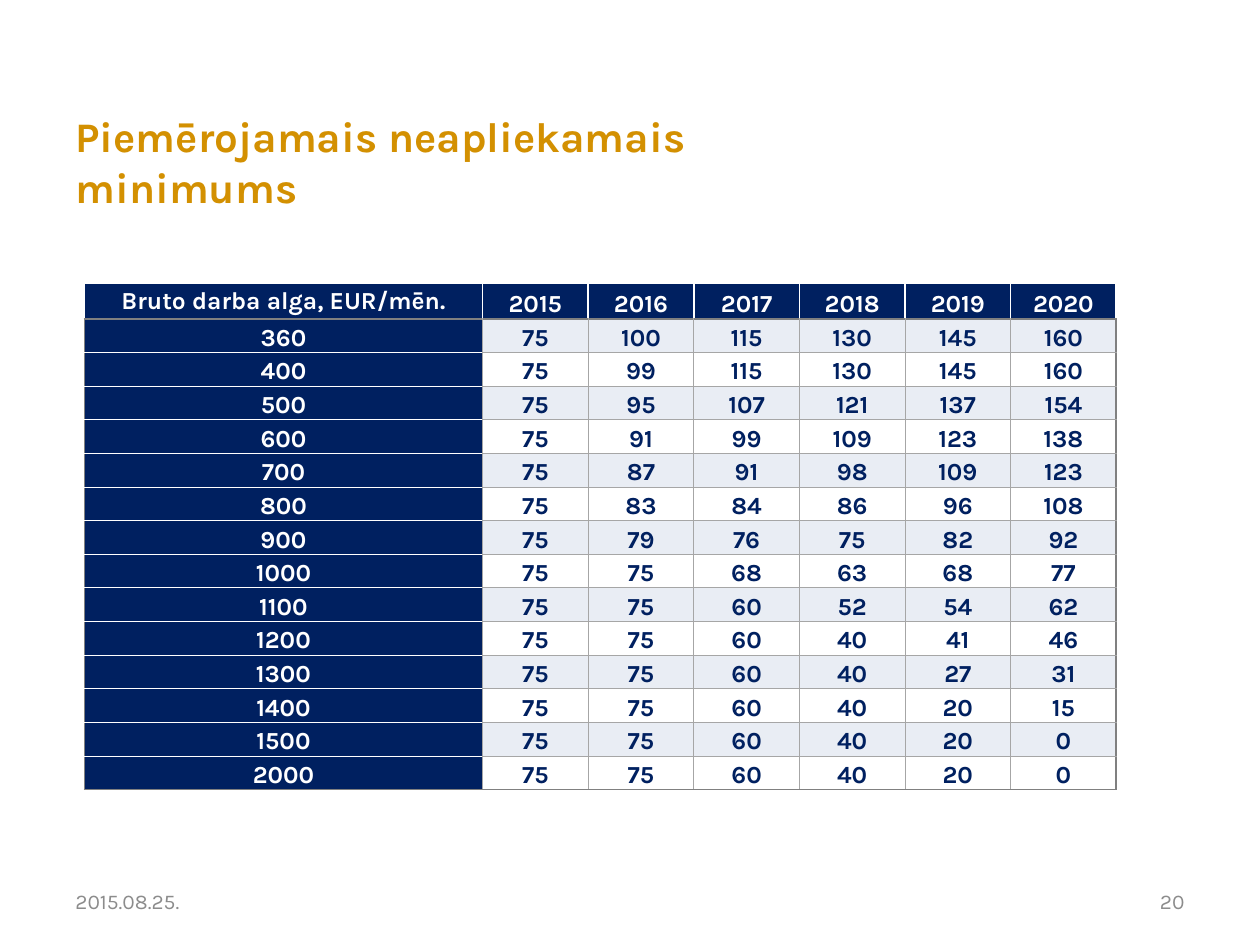
from dataclasses import dataclass
from lxml.etree import SubElement as Sub
from pptx import Presentation as Deck
from pptx.dml.color import RGBColor as RGB
from pptx.enum.text import MSO_ANCHOR as Anchor, MSO_AUTO_SIZE as Auto, PP_ALIGN as Align
from pptx.oxml.ns import qn
from pptx.util import Inches, Pt

TITLE = "Piemērojamais neapliekamais minimums"
DATE, PAGE = "2015.08.25.", "20"
HEAD = ["Bruto darba alga, EUR/mēn.", 2015, 2016, 2017, 2018, 2019, 2020]
RATES = [
    (360, 75, 100, 115, 130, 145, 160),
    (400, 75, 99, 115, 130, 145, 160),
    (500, 75, 95, 107, 121, 137, 154),
    (600, 75, 91, 99, 109, 123, 138),
    (700, 75, 87, 91, 98, 109, 123),
    (800, 75, 83, 84, 86, 96, 108),
    (900, 75, 79, 76, 75, 82, 92),
    (1000, 75, 75, 68, 63, 68, 77),
    (1100, 75, 75, 60, 52, 54, 62),
    (1200, 75, 75, 60, 40, 41, 46),
    (1300, 75, 75, 60, 40, 27, 31),
    (1400, 75, 75, 60, 40, 20, 15),
    (1500, 75, 75, 60, 40, 20, 0),
    (2000, 75, 75, 60, 40, 20, 0),
]


@dataclass(frozen=True)
class Theme:
    font: str = "Karla"
    gold: str = "D39001"
    navy: str = "002060"
    white: str = "FFFFFF"
    band: str = "E9EDF4"
    grid: str = "A6A6A6"
    edge: str = "808080"
    note: str = "8C8C8C"
    big: int = 24
    mid: int = 14
    small: int = 12


LOOK = Theme()
ROWS, COLS = len(RATES) + 1, len(HEAD)
WIDTH, HEIGHT, FIRST, TOP = 8.19, 4.02, 3.16, 0.28
WHITE, EDGE = (LOOK.white, 1), (LOOK.edge, 1)
THIN, GRID = (LOOK.white, 0.5), (LOOK.grid, 0.5)


def write(frame, text, size, color, bold=False, align=Align.LEFT):
    para = frame.paragraphs[0]
    para.alignment = align
    run = para.add_run()
    run.text = str(text)
    font = run.font
    font.name, font.size, font.bold = LOOK.font, Pt(size), bold
    font.color.rgb = RGB.from_string(color)


def lines(row, col):
    if row == 0:
        return {"L": WHITE, "R": WHITE, "T": WHITE, "B": EDGE}
    rule = THIN if col == 0 else GRID
    return {
        "L": EDGE if col == 0 else GRID,
        "R": EDGE if col == COLS - 1 else GRID,
        "T": EDGE if row == 1 else rule,
        "B": EDGE if row == ROWS - 1 else rule,
    }


def border(cell, sides):
    props = cell._tc.get_or_add_tcPr()
    for side, (color, width) in sides.items():
        line = Sub(props, qn(f"a:ln{side}"), w=str(Pt(width)))
        fill = Sub(line, qn("a:solidFill"))
        Sub(fill, qn("a:srgbClr"), val=color)


def style(cell, text, row, col):
    dark = row == 0 or col == 0
    cell.margin_left = cell.margin_right = cell.margin_top = cell.margin_bottom = 0
    cell.vertical_anchor = Anchor.MIDDLE if row == col == 0 else Anchor.BOTTOM
    border(cell, lines(row, col))
    cell.fill.solid()
    tint = LOOK.navy if dark else LOOK.band if row % 2 else LOOK.white
    cell.fill.fore_color.rgb = RGB.from_string(tint)
    ink = LOOK.white if dark else LOOK.navy
    write(cell.text_frame, text, LOOK.mid, ink, True, Align.CENTER)


def add_title(slide):
    title = slide.shapes.title
    title.left, title.top = Inches(0.5), Inches(0.65)
    title.width, title.height = Inches(6.33), Inches(1.26)
    title.fill.solid()
    title.fill.fore_color.rgb = RGB.from_string(LOOK.white)
    frame = title.text_frame
    frame.auto_size, frame.vertical_anchor = Auto.NONE, Anchor.MIDDLE
    write(frame, TITLE, LOOK.big, LOOK.gold, True)


def add_note(slide, left, text, align):
    box = slide.shapes.add_textbox(Inches(left), Inches(6.95), Inches(2.33), Inches(0.4))
    frame = box.text_frame
    frame.word_wrap, frame.vertical_anchor = True, Anchor.MIDDLE
    write(frame, text, LOOK.small, LOOK.note, align=align)


def add_rates(slide):
    spot = Inches(0.67), Inches(2.25), Inches(WIDTH), Inches(HEIGHT)
    table = slide.shapes.add_table(ROWS, COLS, *spot).table
    table.first_row = table.horz_banding = False
    for col, item in enumerate(table.columns):
        item.width = Inches((WIDTH - FIRST) / (COLS - 1) if col else FIRST)
    for row, item in enumerate(table.rows):
        item.height = Inches((HEIGHT - TOP) / (ROWS - 1) if row else TOP)
    for row, data in enumerate([HEAD, *RATES]):
        for col, text in enumerate(data):
            style(table.cell(row, col), text, row, col)


def main():
    deck = Deck()
    deck.slide_width, deck.slide_height = Inches(10), Inches(7.5)
    slide = deck.slides.add_slide(deck.slide_layouts[5])
    add_note(slide, 0.5, DATE, Align.LEFT)
    add_note(slide, 7.17, PAGE, Align.RIGHT)
    add_title(slide)
    add_rates(slide)
    deck.save("out.pptx")


if __name__ == "__main__":
    main()
